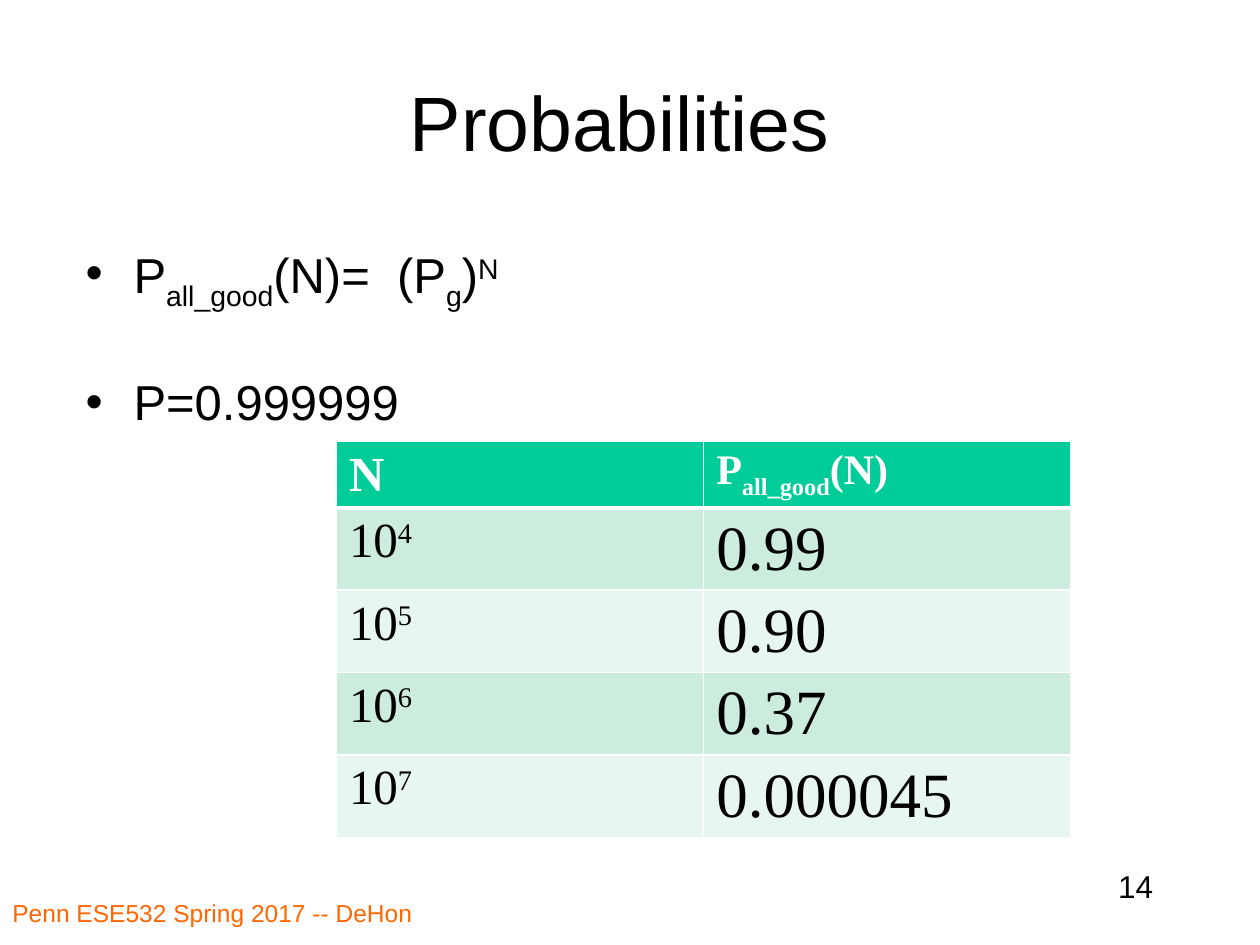
"""Build the slide on the probability that all N parts are good."""
from lxml import etree
from pptx import Presentation
from pptx.dml.color import RGBColor
from pptx.enum.text import MSO_ANCHOR, MSO_AUTO_SIZE, PP_ALIGN
from pptx.oxml.ns import qn
from pptx.util import Inches, Pt

LEFT, CENTER, RIGHT = PP_ALIGN.LEFT, PP_ALIGN.CENTER, PP_ALIGN.RIGHT
MIDDLE, NO_FIT = MSO_ANCHOR.MIDDLE, MSO_AUTO_SIZE.NONE
SUB, SUPER = -25000, 30000
P_ALL_GOOD = [("P", 0), ("all_good", SUB)]


def color(value):
    return RGBColor.from_string(value)


class ProbabilitySlide:
    """Hold the style and the current slide."""
    sans, serif = "Arial", "Times New Roman"
    black, white, orange = "000000", "FFFFFF", "FF6600"
    header_fill, bands = "00CC99", ("CCECDE", "E7F6EF")

    def __init__(self, presentation):
        self.slide = presentation.slides.add_slide(presentation.slide_layouts[1])

    def add_parts(self, paragraph, parts, size, ink=black, face=sans, bold=False, align=LEFT):
        for text, baseline in parts:
            run = paragraph.add_run()
            run.text = text
            if baseline:
                run.font._element.set("baseline", str(baseline))
        font = paragraph.font
        font.size, font.name, font.bold = Pt(size), face, bold
        font.color.rgb = color(ink)
        paragraph.alignment = align

    def place(self, shape, box):
        shape.left, shape.top, shape.width, shape.height = map(Inches, box)
        frame = shape.text_frame
        frame.word_wrap, frame.auto_size = True, NO_FIT
        return frame

    def title(self, text, box):
        frame = self.place(self.slide.shapes.title, box)
        frame.vertical_anchor = MIDDLE
        self.add_parts(frame.paragraphs[0], [(text, 0)], 44, align=CENTER)

    def bullets(self, items, box, gap):
        frame = self.place(self.slide.placeholders[1], box)
        frame.margin_top = Inches(0.12)
        for index, parts in enumerate(items):
            paragraph = frame.add_paragraph() if index else frame.paragraphs[0]
            properties = paragraph._p.get_or_add_pPr()
            properties.set("marL", str(Inches(0.38)))
            properties.set("indent", str(-Inches(0.38)))
            etree.SubElement(properties, qn("a:buChar")).set("char", "•")
            paragraph.line_spacing = 0.9
            paragraph.space_before = Pt(gap if index else 0)
            self.add_parts(paragraph, parts, 28)

    def label(self, text, box, size, ink=black, align=LEFT):
        frame = self.place(self.slide.shapes.add_textbox(0, 0, 0, 0), box)
        self.add_parts(frame.paragraphs[0], [(text, 0)], size, ink, align=align)

    def border(self, cell, bottom):
        properties = cell._tc.get_or_add_tcPr()
        for side, width in (("L", 1), ("R", 1), ("T", 1), ("B", bottom)):
            line = etree.SubElement(properties, qn(f"a:ln{side}"), w=str(Pt(width)))
            fill = etree.SubElement(line, qn("a:solidFill"))
            etree.SubElement(fill, qn("a:srgbClr"), val=self.white)

    def table(self, rows, box, header_height, row_height):
        frame = self.slide.shapes.add_table(len(rows), len(rows[0]), *map(Inches, box))
        grid = frame.table
        for r, row in enumerate(rows):
            header = r == 0
            grid.rows[r].height = Inches(header_height if header else row_height)
            for c, (parts, size) in enumerate(row):
                cell = grid.cell(r, c)
                self.border(cell, 3 if header else 1)
                cell.fill.solid()
                cell.fill.fore_color.rgb = color(
                    self.header_fill if header else self.bands[(r - 1) % 2])
                self.add_parts(cell.text_frame.paragraphs[0], parts, size,
                               self.white if header else self.black, self.serif, header)


def main():
    presentation = Presentation()
    presentation.slide_width, presentation.slide_height = Inches(10), Inches(7.5)
    page = ProbabilitySlide(presentation)
    page.label("Penn ESE532 Spring 2017 -- DeHon", (0, 7.08, 4.08, 0.42), 14, page.orange)
    page.label("14", (7.17, 6.83, 2.08, 0.5), 18, align=RIGHT)
    page.title("Probabilities", (0.67, 0.33, 8.5, 1.25))
    formula = P_ALL_GOOD + [("(N)=  (P", 0), ("g", SUB), (")", 0), ("N", SUPER)]
    page.bullets([formula, [("P=0.999999", 0)]], (0.58, 1.83, 8.5, 5), gap=41)
    results = {"4": "0.99", "5": "0.90", "6": "0.37", "7": "0.000045"}
    rows = [[([("N", 0)], 28), (P_ALL_GOOD + [("(N)", 0)], 24)]]
    rows += [[([("10", 0), (exponent, SUPER)], 28), ([(chance, 0)], 36)]
             for exponent, chance in results.items()]
    page.table(rows, (2.67, 3.5, 5.83, 3.12), header_height=0.52, row_height=0.65)
    presentation.save("out.pptx")


if __name__ == "__main__":
    main()
